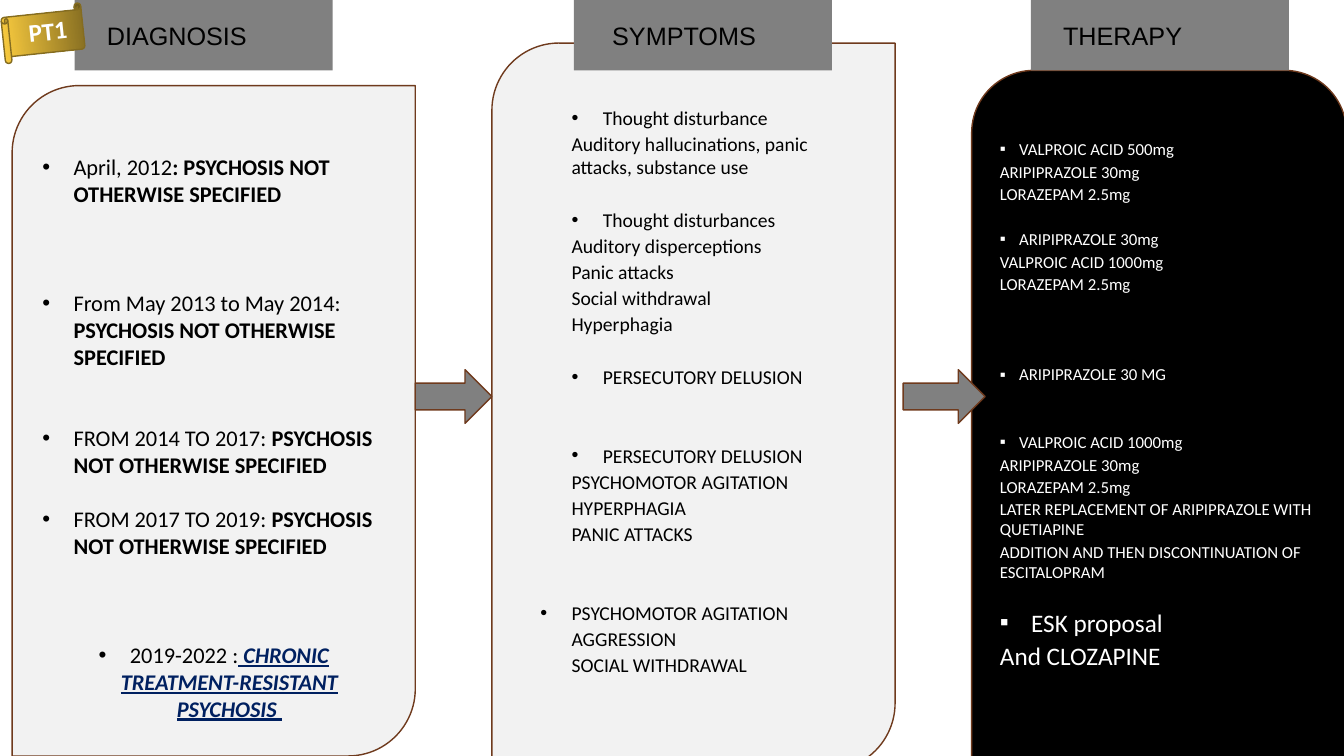
"""Build the patient timeline slide: diagnosis, symptoms and therapy."""
from dataclasses import dataclass

from lxml.etree import SubElement
from pptx import Presentation
from pptx.dml.color import RGBColor
from pptx.enum.shapes import MSO_SHAPE as Preset
from pptx.enum.text import MSO_ANCHOR as Anchor, MSO_AUTO_SIZE as AutoSize, PP_ALIGN as Align
from pptx.oxml.ns import qn
from pptx.util import Inches, Pt


@dataclass(frozen=True)
class Theme:
    body_font: str = "Calibri"
    heading_font: str = "Arial"
    black: str = "000000"
    white: str = "FFFFFF"
    pale: str = "F2F2F2"
    gray: str = "808080"
    outline: str = "6F3A1D"
    gold: str = "FECF40"
    bronze: str = "846C21"
    navy: str = "002060"
    diagnosis_size: int = 16
    symptom_size: int = 14
    therapy_size: int = 12
    heading_size: int = 18
    line_height: float = 1.22
    space_after: float = 0.13
    indent: float = 0.31
    small_indent: float = 0.19


@dataclass(frozen=True)
class Entry:
    text: str
    bullet: str = ""
    gap: int = 0
    strong: str = ""
    final: str = ""
    size: int = 0
    margin: float = 0
    hanging: float = 0


THEME = Theme()
WIDTH, HEIGHT = Inches(13.33), Inches(7.5)


def area(left, top, width, height):
    return (int(WIDTH * left / 100), int(HEIGHT * top / 100),
            int(WIDTH * width / 100), int(HEIGHT * height / 100))


def color(value):
    return RGBColor.from_string(value)


def add_block(slide, preset, place, fill, outline=None):
    shape = slide.shapes.add_shape(preset, *area(*place))
    shape.shadow.inherit = False
    shape.fill.solid()
    shape.fill.fore_color.rgb = color(fill)
    if outline:
        shape.line.color.rgb = color(outline)
        shape.line.width = Pt(1)
    else:
        shape.line.fill.background()
    return shape


def add_run(paragraph, text, size, fill, name=THEME.body_font, bold=False):
    run = paragraph.add_run()
    run.text = text
    font = run.font
    font.name, font.size, font.bold = name, Pt(size), bold
    font.color.rgb = color(fill)
    return font


def prepare_frame(shape, anchor, left=0):
    frame = shape.text_frame
    frame.word_wrap = True
    frame.auto_size = AutoSize.NONE
    frame.vertical_anchor = anchor
    frame.margin_left = Inches(left)
    frame.margin_right = frame.margin_top = frame.margin_bottom = 0
    return frame


def add_heading(slide, text, left, inset):
    shape = add_block(slide, Preset.RECTANGLE, (left, 0, 19.2, 9.33), THEME.gray)
    paragraph = prepare_frame(shape, Anchor.MIDDLE, inset).paragraphs[0]
    paragraph.alignment = Align.LEFT
    add_run(paragraph, text, THEME.heading_size, THEME.black, THEME.heading_font)


def place_on_top(slide, placeholder, place):
    placeholder.left, placeholder.top, placeholder.width, placeholder.height = area(*place)
    slide.shapes._spTree.append(placeholder._element)


def set_bullet(paragraph, mark, margin, hanging):
    properties = paragraph._p.get_or_add_pPr()
    properties.set("marL", str(Inches(margin)))
    properties.set("indent", str(-Inches(hanging)))
    if mark:
        SubElement(properties, qn("a:buFont")).set("typeface", "Arial")
        SubElement(properties, qn("a:buChar")).set("char", mark)
    else:
        SubElement(properties, qn("a:buNone"))


def fill_list(slide, placeholder, place, entries, size, fill, after=THEME.space_after):
    place_on_top(slide, placeholder, place)
    frame = prepare_frame(placeholder, Anchor.TOP)
    for number, entry in enumerate(entries):
        paragraph = frame.add_paragraph() if number else frame.paragraphs[0]
        entry_size = entry.size or size
        set_bullet(paragraph, entry.bullet, entry.margin, entry.hanging)
        paragraph.line_spacing = 1.0
        paragraph.space_before = Pt(round(entry.gap * size * (THEME.line_height + after), 1))
        paragraph.space_after = Pt(round(entry_size * after, 1))
        paragraph.alignment = Align.CENTER if entry.final else Align.LEFT
        add_run(paragraph, entry.text, entry_size, fill)
        if entry.strong:
            add_run(paragraph, entry.strong, entry_size, fill, bold=True)
        if entry.final:
            font = add_run(paragraph, entry.final, entry_size, THEME.navy, bold=True)
            font.italic = font.underline = True


def add_badge(slide, text):
    badge = add_block(slide, Preset.HORIZONTAL_SCROLL, (0.2, 0.9, 6, 7), THEME.gold, THEME.bronze)
    badge.fill.gradient()
    badge.fill.gradient_angle = 0
    for stop, value in zip(badge.fill.gradient_stops, (THEME.gold, THEME.bronze)):
        stop.color.rgb = color(value)
    title = slide.shapes.title
    place_on_top(slide, title, (0.75, 1.1, 5.6, 5.9))
    badge.rotation = title.rotation = -6
    paragraph = prepare_frame(title, Anchor.MIDDLE).paragraphs[0]
    paragraph.alignment = Align.CENTER
    add_run(paragraph, text, THEME.heading_size, THEME.white, bold=True)


def diagnosis(text, gap=0, strong="", final=""):
    return Entry(text, "•", gap, strong, final, margin=THEME.indent, hanging=THEME.indent)


def symptom_group(gap, first, *others, outdent=False):
    step = THEME.indent
    lead = Entry(first, "•", gap, margin=step if outdent else 2 * step, hanging=step)
    return [lead] + [Entry(text, margin=step) for text in others]


def therapy_group(gap, first, *others, size=0, step=THEME.small_indent):
    lead = Entry(first, "▪", gap, size=size, margin=step, hanging=step)
    return [lead] + [Entry(text, size=size) for text in others]


def main():
    presentation = Presentation()
    presentation.slide_width, presentation.slide_height = WIDTH, HEIGHT
    slide = presentation.slides.add_slide(presentation.slide_layouts[4])
    _, diagnoses, symptoms, spare, therapies = slide.placeholders
    spare._element.getparent().remove(spare._element)

    for preset, place, fill in (
            (Preset.ROUND_2_DIAG_RECTANGLE, (0.9, 11.33, 30, 88.67), THEME.pale),
            (Preset.ROUND_2_DIAG_RECTANGLE, (36.6, 5.7, 30, 96.2), THEME.pale),
            (Preset.ROUND_2_SAME_RECTANGLE, (72.3, 9.3, 27.9, 90.8), THEME.black),
            (Preset.RIGHT_ARROW, (30.9, 48.9, 5.7, 7.1), THEME.gray),
            (Preset.RIGHT_ARROW, (67.2, 48.9, 6.1, 7.1), THEME.gray)):
        add_block(slide, preset, place, fill, THEME.outline)
    for text, left, inset in (("DIAGNOSIS", 5.55, 0.32), ("SYMPTOMS", 42.7, 0.38),
                              ("THERAPY", 76.7, 0.32)):
        add_heading(slide, text, left, inset)

    unspecified = "PSYCHOSIS NOT OTHERWISE SPECIFIED"
    fill_list(slide, diagnoses, (3.15, 20.27, 25.5, 75), [
        diagnosis("April, 2012", strong=": " + unspecified),
        diagnosis("From May 2013 to May 2014: ", 3, unspecified),
        diagnosis("FROM 2014 TO 2017: ", 2, unspecified),
        diagnosis("FROM 2017 TO 2019: ", 1, unspecified),
        diagnosis("2019-2022 :", 3, final=" CHRONIC TREATMENT-RESISTANT PSYCHOSIS "),
    ], THEME.diagnosis_size, THEME.black, after=0)
    fill_list(slide, symptoms, (40.2, 13.96, 22.8, 78), [
        *symptom_group(0, "Thought disturbance",
                       "Auditory hallucinations, panic attacks, substance use"),
        *symptom_group(1, "Thought disturbances", "Auditory disperceptions", "Panic attacks",
                       "Social withdrawal", "Hyperphagia"),
        *symptom_group(1, "PERSECUTORY DELUSION"),
        *symptom_group(2, "PERSECUTORY DELUSION", "PSYCHOMOTOR AGITATION", "HYPERPHAGIA",
                       "PANIC ATTACKS"),
        *symptom_group(2, "PSYCHOMOTOR AGITATION", "AGGRESSION", "SOCIAL WITHDRAWAL",
                       outdent=True),
    ], THEME.symptom_size, THEME.black)
    fill_list(slide, therapies, (74.4, 18.4, 23.7, 75), [
        *therapy_group(0, "VALPROIC ACID 500mg", "ARIPIPRAZOLE 30mg", "LORAZEPAM 2.5mg"),
        *therapy_group(1, "ARIPIPRAZOLE 30mg", "VALPROIC ACID 1000mg", "LORAZEPAM 2.5mg"),
        *therapy_group(3, "ARIPIPRAZOLE 30 MG"),
        *therapy_group(2, "VALPROIC ACID 1000mg", "ARIPIPRAZOLE 30mg", "LORAZEPAM 2.5mg",
                       "LATER REPLACEMENT OF ARIPIPRAZOLE WITH QUETIAPINE",
                       "ADDITION AND THEN DISCONTINUATION OF ESCITALOPRAM"),
        *therapy_group(1, "ESK proposal", "And CLOZAPINE", size=THEME.heading_size,
                       step=THEME.indent),
    ], THEME.therapy_size, THEME.white)
    add_badge(slide, "PT1")
    presentation.save("out.pptx")


if __name__ == "__main__":
    main()
